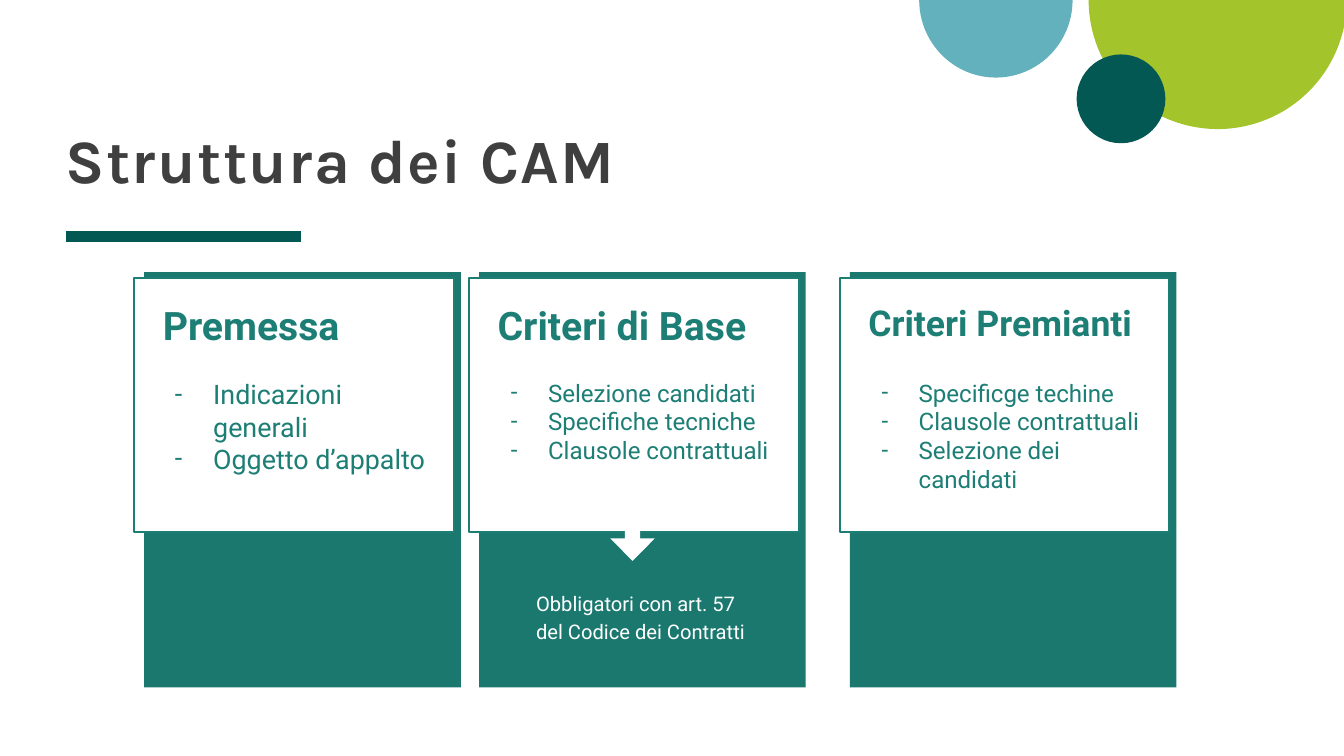
"""Build the slide on the structure of the CAM as three cards."""
from dataclasses import dataclass

from lxml.etree import SubElement
from pptx import Presentation
from pptx.dml.color import RGBColor
from pptx.enum.shapes import MSO_CONNECTOR, MSO_SHAPE
from pptx.enum.text import MSO_ANCHOR
from pptx.oxml.ns import qn
from pptx.util import Pt

DARK = "035854"
TEAL = "1B786F"
INK = "1D7E75"
WHITE = "FFFFFF"
GREY = "3F3F3F"
LIME = "A3C42A"
BLUE = "64B1BE"


@dataclass
class Box:
    left: float
    top: float
    width: float
    height: float

    def sides(self) -> list:
        return [Pt(side) for side in (self.left, self.top, self.width, self.height)]


@dataclass
class Style:
    size: float
    color: str = INK
    bold: bool = False
    face: str = "Roboto"


@dataclass
class Disc:
    kind: MSO_SHAPE
    box: Box
    color: str


@dataclass
class Card:
    left: float
    width: float
    title: str
    points: list[str]
    head_size: float
    size: float
    hang: float


DISCS = [
    Disc(MSO_SHAPE.PIE, Box(777.6, -92.2, 184.4, 184.4), LIME),
    Disc(MSO_SHAPE.PIE, Box(656.6, -55.4, 109.6, 110.8), BLUE),
    Disc(MSO_SHAPE.OVAL, Box(769, 38.9, 63.4, 63.4), DARK),
]
CARDS = [
    Card(103, 226.3, "Premessa",
         ["Indicazioni generali", "Oggetto d’appalto"], 28, 19.2, 27.4),
    Card(342.2, 233.3, "Criteri di Base",
         ["Selezione candidati", "Specifiche tecniche", "Clausole contrattuali"],
         28, 17.2, 26.6),
    Card(607, 233.3, "Criteri Premianti",
         ["Specificge techine", "Clausole contrattuali", "Selezione dei candidati"],
         25.4, 17.2, 26.6),
]


def tint(code: str) -> RGBColor:
    return RGBColor.from_string(code)


def add_form(shapes, kind: MSO_SHAPE, box: Box, fill: str, edge: str = ""):
    form = shapes.add_shape(kind, *box.sides())
    form.shadow.inherit = False
    form.fill.solid()
    form.fill.fore_color.rgb = tint(fill)
    if edge:
        form.line.color.rgb = tint(edge)
        form.line.width = Pt(1.5)
    else:
        form.line.fill.background()
    return form


def add_frame(shapes, box: Box, inset: float = 7.2):
    frame = shapes.add_textbox(*box.sides()).text_frame
    frame.word_wrap = True
    frame.margin_left = frame.margin_right = Pt(inset)
    frame.margin_top = frame.margin_bottom = Pt(inset)
    return frame


def add_run(para, text: str, style: Style):
    run = para.add_run()
    run.text = text
    font = run.font
    font.name = style.face
    font.size = Pt(style.size)
    font.bold = style.bold
    font.color.rgb = tint(style.color)
    return run


def set_dash(para, hang: float) -> None:
    props = para._p.get_or_add_pPr()
    props.set("marL", str(Pt(36)))
    props.set("indent", str(-Pt(hang)))
    SubElement(SubElement(props, qn("a:buClr")), qn("a:srgbClr"), val=INK)
    SubElement(props, qn("a:buFont"), typeface="Roboto")
    SubElement(props, qn("a:buChar"), char="-")


def add_title(shapes) -> None:
    rule = shapes.add_connector(
        MSO_CONNECTOR.STRAIGHT, Pt(47), Pt(169.2), Pt(214.7), Pt(169.2))
    rule.line.color.rgb = tint(DARK)
    rule.line.width = Pt(8)
    SubElement(rule.element.spPr, qn("a:effectLst"))
    frame = add_frame(shapes, Box(47, 15.8, 864, 123.8), 0)
    frame.vertical_anchor = MSO_ANCHOR.BOTTOM
    para = frame.paragraphs[0]
    para.line_spacing = 0.8
    run = add_run(para, "Struttura dei CAM", Style(44, GREY, True, "Karla"))
    run.font._element.set("spc", "100")


def add_card(shapes, card: Card) -> None:
    group = shapes.add_group_shape().shapes
    add_form(group, MSO_SHAPE.RECTANGLE, Box(card.left, 194.4, card.width, 296.6), TEAL)
    add_form(group, MSO_SHAPE.RECTANGLE,
             Box(card.left - 7, 198.7, card.width + 2, 181.4), WHITE, INK)
    left, width = card.left + 6.2, card.width - 24
    frame = add_frame(group, Box(left, 262.8, width, 116))
    for rank, point in enumerate(card.points):
        para = frame.add_paragraph() if rank else frame.paragraphs[0]
        set_dash(para, card.hang)
        add_run(para, point, Style(card.size))
    head = add_frame(group, Box(left, 208, width, 49))
    add_run(head.paragraphs[0], card.title, Style(card.head_size, bold=True))


def add_note(shapes) -> None:
    arrow = add_form(shapes, MSO_SHAPE.RIGHT_ARROW, Box(437.8, 370.8, 28, 31.7), WHITE)
    arrow.rotation = 90
    arrow.adjustments[0] = 0.34
    arrow.adjustments[1] = 0.57
    frame = add_frame(shapes, Box(339.1, 412.6, 208, 60.5))
    para = frame.paragraphs[0]
    para.line_spacing = 1.15
    para._p.get_or_add_pPr().set("marL", str(Pt(36.7)))
    add_run(para, "Obbligatori con art. 57 del Codice dei Contratti", Style(14.4, WHITE))


def main() -> None:
    deck = Presentation()
    deck.slide_width, deck.slide_height = Pt(960), Pt(540)
    shapes = deck.slides.add_slide(deck.slide_layouts[6]).shapes
    for disc in DISCS:
        form = add_form(shapes, disc.kind, disc.box, disc.color)
        if disc.kind == MSO_SHAPE.PIE:
            form.adjustments[0] = 0
            form.adjustments[1] = 108
    add_title(shapes)
    for card in CARDS:
        add_card(shapes, card)
    add_note(shapes)
    deck.save("out.pptx")


if __name__ == "__main__":
    main()
